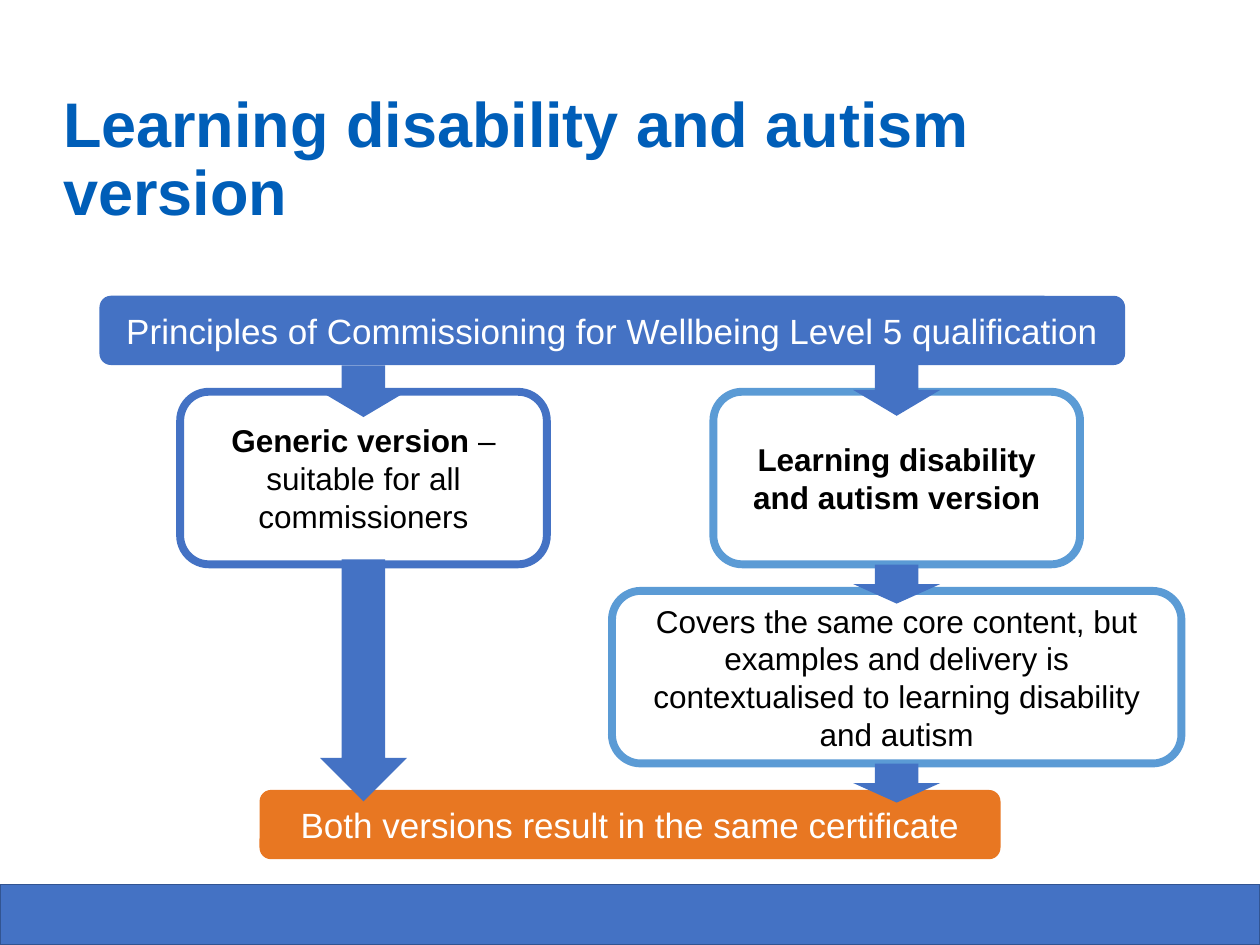
from pptx import Presentation
from pptx.dml.color import RGBColor
from pptx.enum import shapes, text
from pptx.util import Pt

COLOURS = {"title": "005EB8", "blue": "4472C4", "edge": "325491",
           "sky": "5B9BD5", "orange": "E87722", "white": "FFFFFF", "black": "000000"}
LEFT_CENTRE, RIGHT_CENTRE = 207.7, 512.4
KIND = shapes.MSO_SHAPE


def colour(name):
    return RGBColor.from_string(COLOURS[name])


def add_box(kind, left, top, width, height, fill=None, line=None, weight=1):
    box = page.shapes.add_shape(kind, Pt(left), Pt(top), Pt(width), Pt(height))
    box.shadow.inherit = False
    if fill:
        box.fill.solid()
        box.fill.fore_color.rgb = colour(fill)
    else:
        box.fill.background()
    if line:
        box.line.color.rgb = colour(line)
        box.line.width = Pt(weight)
    else:
        box.line.fill.background()
    return box


deck = Presentation()
deck.slide_width, deck.slide_height = Pt(720), Pt(540)
page = deck.slides.add_slide(deck.slide_layouts[5])

# Footer band
add_box(KIND.RECTANGLE, 0, 505.4, 720, 34.6, "blue", "edge")

# Title
title = page.shapes.title
title.left, title.top, title.width, title.height = Pt(28.8), Pt(49.7), Pt(566.6), Pt(51.1)
frame = title.text_frame
frame.word_wrap = True
frame.auto_size = text.MSO_AUTO_SIZE.NONE
frame.vertical_anchor = text.MSO_ANCHOR.TOP
para = frame.paragraphs[0]
para.alignment = text.PP_ALIGN.LEFT
para.line_spacing = 0.9
para.space_before = Pt(0)
span = para.add_run()
span.text = "Learning disability and autism version"
span.font.name, span.font.size, span.font.bold = "Arial", Pt(36), True
span.font.color.rgb = colour("title")

# Boxes: centre, top, width, height, fill, line, text size, text colour, (text, bold) runs
boxes = [
    (349.9, 169, 586.1, 39.6, "blue", None, 20, "white",
     [("Principles of Commissioning for Wellbeing Level 5 qualification", False)]),
    (LEFT_CENTRE, 223.9, 209.5, 98.6, None, "blue", 18, "black",
     [("Generic version ", True), ("– suitable for all commissioners", False)]),
    (RIGHT_CENTRE, 223.9, 209.5, 98.6, None, "sky", 18, "black",
     [("Learning disability and autism version", True)]),
    (RIGHT_CENTRE, 337.7, 325.4, 98.6, None, "sky", 18, "black",
     [("Covers the same core content, but examples and delivery is "
       "contextualised to learning disability and autism", False)]),
    (360, 451.4, 423.4, 39.6, "orange", None, 20, "white",
     [("Both versions result in the same certificate", False)]),
]
for centre, top, width, height, fill, line, size, ink, runs in boxes:
    box = add_box(KIND.ROUNDED_RECTANGLE, centre - width / 2, top, width, height,
                  fill, line, 4.5)
    box.text_frame.word_wrap = True
    box.text_frame.vertical_anchor = text.MSO_ANCHOR.MIDDLE
    para = box.text_frame.paragraphs[0]
    para.alignment = text.PP_ALIGN.CENTER
    for words, bold in runs:
        span = para.add_run()
        span.text = words
        span.font.name, span.font.size, span.font.bold = "Arial", Pt(size), bold
        span.font.color.rgb = colour(ink)

# Arrows: centre, top, height
ARROW_WIDTH = 49.7
arrows = [(LEFT_CENTRE, 208.8, 29.5), (RIGHT_CENTRE, 208.1, 29.5),
          (RIGHT_CENTRE, 322.6, 22.3), (RIGHT_CENTRE, 436.3, 22.3),
          (LEFT_CENTRE, 319.7, 138.2)]
for centre, top, height in arrows:
    add_box(KIND.DOWN_ARROW, centre - ARROW_WIDTH / 2, top, ARROW_WIDTH, height, "blue")

deck.save("out.pptx")
